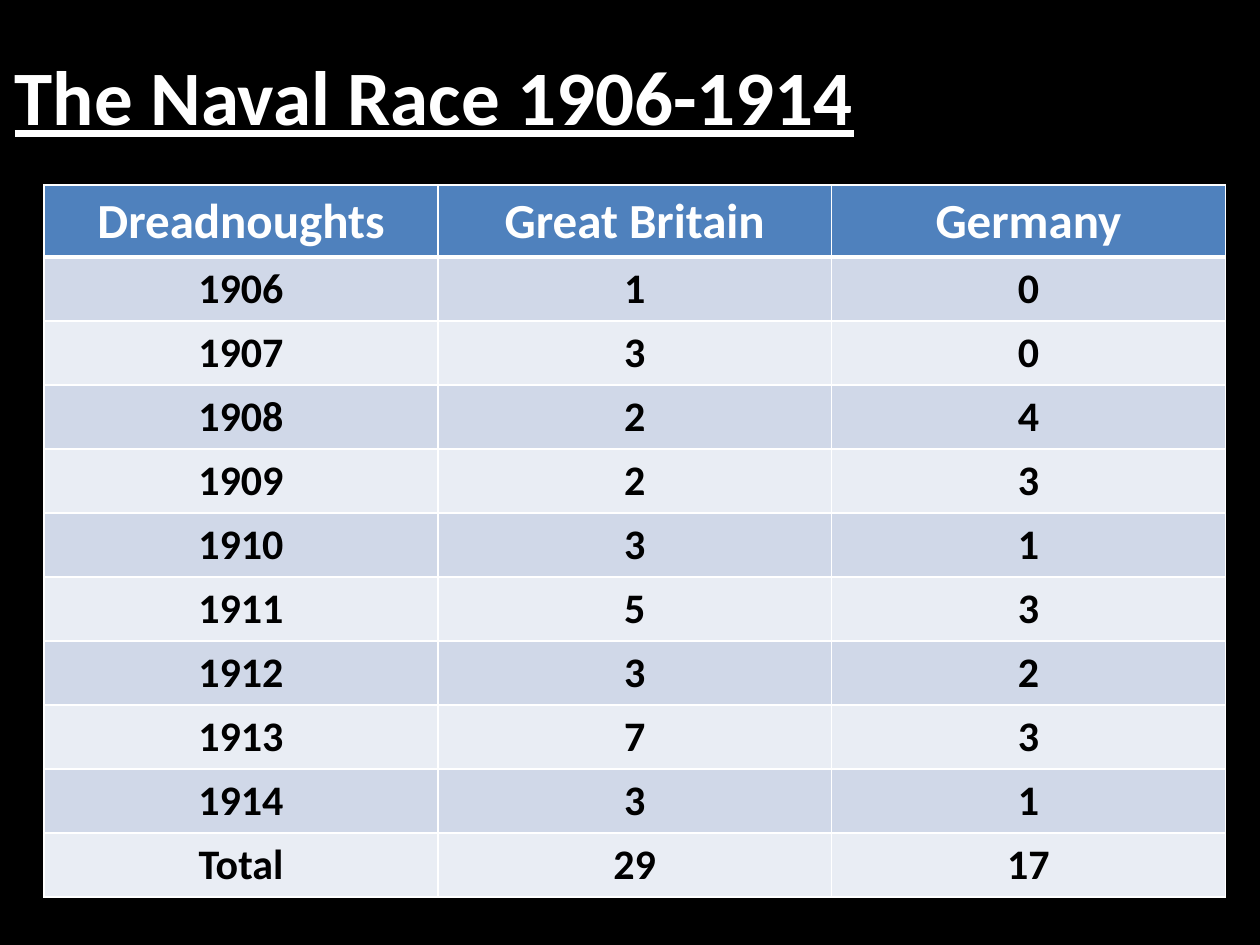
from lxml.etree import SubElement
from pptx import Presentation
from pptx.dml.color import RGBColor
from pptx.enum.text import MSO_ANCHOR, PP_ALIGN
from pptx.oxml.ns import qn
from pptx.util import Inches, Pt

FONT = "Calibri"
WHITE, BLACK = "FFFFFF", "000000"
HEADER_FILL = "4F81BD"
BAND_FILLS = ("D0D8E8", "E9EDF4")
HEADER_HEIGHT, ROW_HEIGHT, COLUMN_WIDTH = 0.57, 0.508, 3.125

DREADNOUGHTS = [
    ("Dreadnoughts", "Great Britain", "Germany"),
    ("1906", "1", "0"),
    ("1907", "3", "0"),
    ("1908", "2", "4"),
    ("1909", "2", "3"),
    ("1910", "3", "1"),
    ("1911", "5", "3"),
    ("1912", "3", "2"),
    ("1913", "7", "3"),
    ("1914", "3", "1"),
    ("Total", "29", "17"),
]


def color(hex_string):
    return RGBColor.from_string(hex_string)


def set_fill(target, hex_string):
    target.fill.solid()
    target.fill.fore_color.rgb = color(hex_string)


def write_text(text_frame, text, size=24, hex_string=BLACK,
               align=PP_ALIGN.LEFT, underline=None):
    paragraph = text_frame.paragraphs[0]
    paragraph.alignment = align
    run = paragraph.add_run()
    run.text = text
    run.font.name = FONT
    run.font.size = Pt(size)
    run.font.bold = True
    run.font.underline = underline
    run.font.color.rgb = color(hex_string)


def set_borders(cell, top=1, bottom=1):
    """Draw white borders; they must precede the fill in the cell properties."""
    properties = cell._tc.get_or_add_tcPr()
    widths = {"a:lnL": 1, "a:lnR": 1, "a:lnT": top, "a:lnB": bottom}
    for tag, width in widths.items():
        line = SubElement(properties, qn(tag), w=str(Pt(width)))
        fill = SubElement(line, qn("a:solidFill"))
        SubElement(fill, qn("a:srgbClr"), val=WHITE)


def add_title(slide, text):
    box = slide.shapes.add_textbox(
        Inches(0.02), Inches(0.13), Inches(9), Inches(1.25))
    box.text_frame.word_wrap = True
    box.text_frame.vertical_anchor = MSO_ANCHOR.MIDDLE
    write_text(box.text_frame, text, size=44, hex_string=WHITE, underline=True)


def add_data_table(slide, rows):
    column_count = len(rows[0])
    height = HEADER_HEIGHT + ROW_HEIGHT * (len(rows) - 1)
    table = slide.shapes.add_table(
        len(rows), column_count, Inches(0.35), Inches(1.47),
        Inches(COLUMN_WIDTH * column_count), Inches(height)).table

    for row_index, values in enumerate(rows):
        is_header = row_index == 0
        table.rows[row_index].height = Inches(
            HEADER_HEIGHT if is_header else ROW_HEIGHT)
        for column_index, value in enumerate(values):
            cell = table.cell(row_index, column_index)
            # A thick rule separates the header from the figures
            set_borders(cell, top=3 if row_index == 1 else 1,
                        bottom=3 if is_header else 1)
            set_fill(cell, HEADER_FILL if is_header
                     else BAND_FILLS[(row_index - 1) % 2])
            write_text(cell.text_frame, value, size=28 if is_header else 24,
                       hex_string=WHITE if is_header else BLACK,
                       align=PP_ALIGN.CENTER)


def main():
    presentation = Presentation()
    presentation.slide_width = Inches(10)
    presentation.slide_height = Inches(7.5)
    slide = presentation.slides.add_slide(presentation.slide_layouts[6])
    set_fill(slide.background, BLACK)

    # Heading and yearly counts
    add_title(slide, "The Naval Race 1906-1914")
    add_data_table(slide, DREADNOUGHTS)

    presentation.save("out.pptx")


if __name__ == "__main__":
    main()
